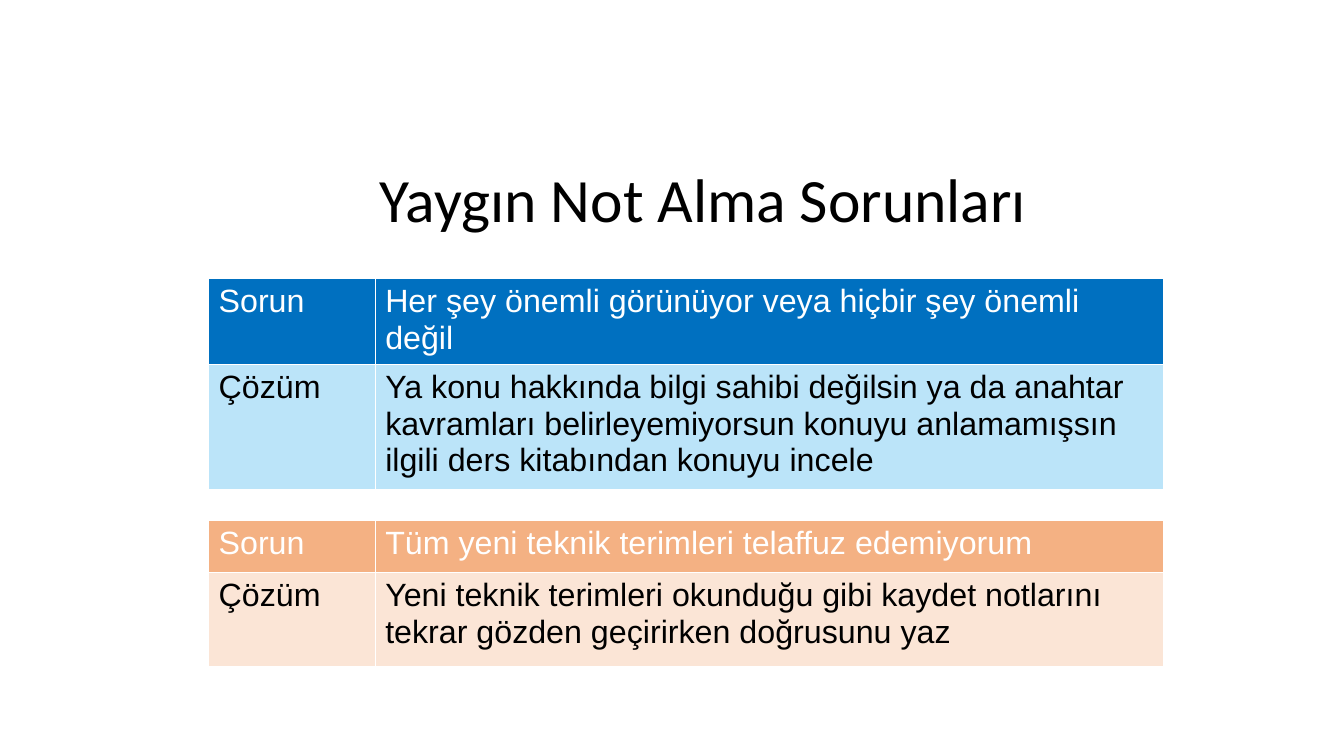
from lxml import etree
from pptx import Presentation
from pptx.dml.color import RGBColor
from pptx.enum import text
from pptx.oxml import ns
from pptx.util import Pt

WHITE = RGBColor(0xFF, 0xFF, 0xFF)
BLACK = RGBColor(0, 0, 0)
BLUE = RGBColor(0x00, 0x70, 0xC0)
PALE_BLUE = RGBColor(0xBB, 0xE4, 0xF9)
ORANGE = RGBColor(0xF4, 0xB1, 0x83)
PALE_ORANGE = RGBColor(0xFB, 0xE5, 0xD6)


def write(tf, words, font="Arial", size=23, color=BLACK, align=None, spacing=None):
    p = tf.paragraphs[0]
    p.alignment = align
    p.line_spacing = spacing
    r = p.add_run()
    r.text = words
    r.font.name = font
    r.font.size = Pt(size)
    r.font.color.rgb = color


class NoteSlide:
    """Holds the current slide and the style of its title and tables."""

    left = 149
    columns = (119, 563.5)
    border = 1

    def __init__(self, prs):
        self.s = prs.slides.add_slide(prs.slide_layouts[6])

    def title(self, words, x, y, w, h):
        sp = self.s.shapes.add_textbox(Pt(x), Pt(y), Pt(w), Pt(h))
        tf = sp.text_frame
        tf.word_wrap = True
        tf.vertical_anchor = text.MSO_ANCHOR.MIDDLE
        write(tf, words, font="Calibri", size=44,
              align=text.PP_ALIGN.CENTER, spacing=0.9)

    def borders(self, cell):
        tcPr = cell._tc.get_or_add_tcPr()
        for i, side in enumerate(("lnL", "lnR", "lnT", "lnB")):
            ln = etree.Element(ns.qn(f"a:{side}"), w=str(Pt(self.border)))
            fill = etree.SubElement(ln, ns.qn("a:solidFill"))
            etree.SubElement(fill, ns.qn("a:srgbClr"), val=str(WHITE))
            tcPr.insert(i, ln)

    def problem_table(self, y, heights, problem, solution, fills):
        sp = self.s.shapes.add_table(2, 2, Pt(self.left), Pt(y),
                                     Pt(sum(self.columns)), Pt(sum(heights)))
        table = sp.table
        for column, w in zip(table.columns, self.columns):
            column.width = Pt(w)
        rows = (("Sorun", problem), ("Çözüm", solution))
        for i, (words, fill, color) in enumerate(zip(rows, fills, (WHITE, BLACK))):
            table.rows[i].height = Pt(heights[i])
            for j, word in enumerate(words):
                cell = table.cell(i, j)
                cell.fill.solid()
                cell.fill.fore_color.rgb = fill
                self.borders(cell)
                write(cell.text_frame, word, color=color)


def main():
    prs = Presentation()
    prs.slide_width, prs.slide_height = Pt(960), Pt(540)
    s = NoteSlide(prs)
    s.problem_table(199, (61.5, 89), "Her şey önemli görünüyor veya hiçbir şey önemli değil",
                    "Ya konu hakkında bilgi sahibi değilsin ya da anahtar kavramları "
                    "belirleyemiyorsun konuyu anlamamışsın ilgili ders kitabından konuyu incele",
                    (BLUE, PALE_BLUE))
    s.problem_table(371.5, (37.5, 67), "Tüm yeni teknik terimleri telaffuz edemiyorum",
                    "Yeni teknik terimleri okunduğu gibi kaydet notlarını "
                    "tekrar gözden geçirirken doğrusunu yaz",
                    (ORANGE, PALE_ORANGE))
    s.title("Yaygın Not Alma Sorunları", 173, 99.5, 659, 90)
    prs.save("out.pptx")


if __name__ == "__main__":
    main()
